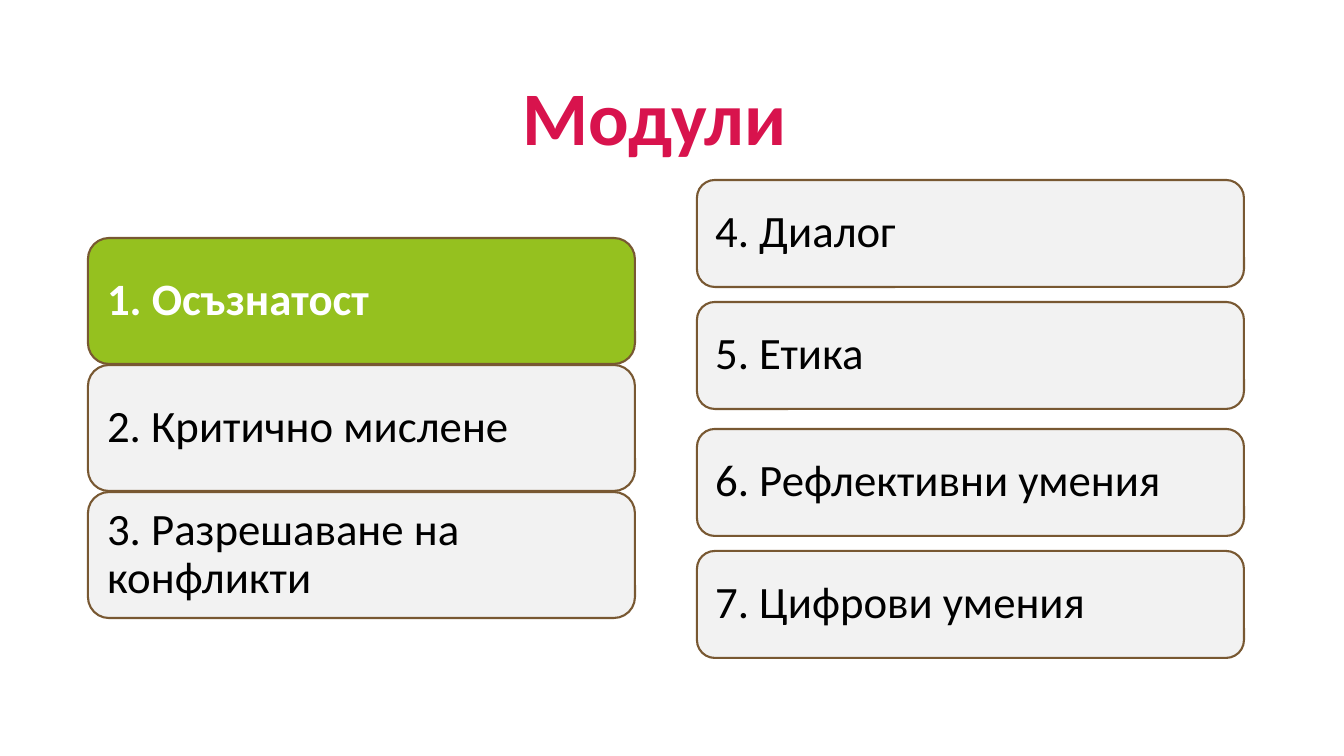
from pptx import Presentation
from pptx.dml.color import RGBColor
from pptx.enum.shapes import MSO_SHAPE
from pptx.enum.text import MSO_ANCHOR, PP_ALIGN
from pptx.util import Pt

ROUNDED = MSO_SHAPE.ROUNDED_RECTANGLE
MIDDLE, BOTTOM = MSO_ANCHOR.MIDDLE, MSO_ANCHOR.BOTTOM
LEFT, CENTER = PP_ALIGN.LEFT, PP_ALIGN.CENTER

TITLE = "Модули"
ACTIVE = "1. Осъзнатост"
COLUMNS = [
    {"left": 88, "height": 126, "modules": [
        (238, ACTIVE),
        (365, "2. Критично мислене"),
        (492, "3. Разрешаване на конфликти"),
    ]},
    {"left": 697, "height": 107, "modules": [
        (180, "4. Диалог"),
        (302, "5. Етика"),
        (429, "6. Рефлективни умения"),
        (551, "7. Цифрови умения"),
    ]},
]
CARD_WIDTH = 547
CARD_INSET = 13


class Theme:
    font = "Calibri"
    title_size, card_size, outline_width = 54, 32, 1.5
    title, outline = "D8134D", "785832"
    active_fill, active_text = "95C11F", "FFFFFF"
    card_fill, card_text = "F2F2F2", "000000"


def px(length):
    return round(length * 914400 / 100.8)


def color(value):
    return RGBColor.from_string(value)


def write(shape, text, size, ink, bold, align, anchor):
    frame = shape.text_frame
    frame.word_wrap = True
    frame.vertical_anchor = anchor
    para = frame.paragraphs[0]
    para.text = text
    para.alignment = align
    para.line_spacing = 0.9
    para.font.name = Theme.font
    para.font.size = Pt(size)
    para.font.bold = bold
    para.font.color.rgb = color(ink)
    return frame


def add_card(page, left, top, height, text):
    active = text == ACTIVE
    card = page.shapes.add_shape(ROUNDED, px(left), px(top), px(CARD_WIDTH), px(height))
    card.shadow.inherit = False
    card.fill.solid()
    card.fill.fore_color.rgb = color(Theme.active_fill if active else Theme.card_fill)
    card.line.color.rgb = color(Theme.outline)
    card.line.width = Pt(Theme.outline_width)
    ink = Theme.active_text if active else Theme.card_text
    frame = write(card, text, Theme.card_size, ink, active, LEFT, MIDDLE)
    frame.margin_left = frame.margin_right = px(CARD_INSET)
    frame.margin_top = frame.margin_bottom = px(CARD_INSET)


def main():
    deck = Presentation()
    deck.slide_width, deck.slide_height = px(1344), px(756)
    page = deck.slides.add_slide(deck.slide_layouts[6])
    heading = page.shapes.add_textbox(px(1), px(-30), px(1307), px(197))
    write(heading, TITLE, Theme.title_size, Theme.title, True, CENTER, BOTTOM)
    for column in COLUMNS:
        for top, text in column["modules"]:
            add_card(page, column["left"], top, column["height"], text)
    deck.save("out.pptx")


if __name__ == "__main__":
    main()
